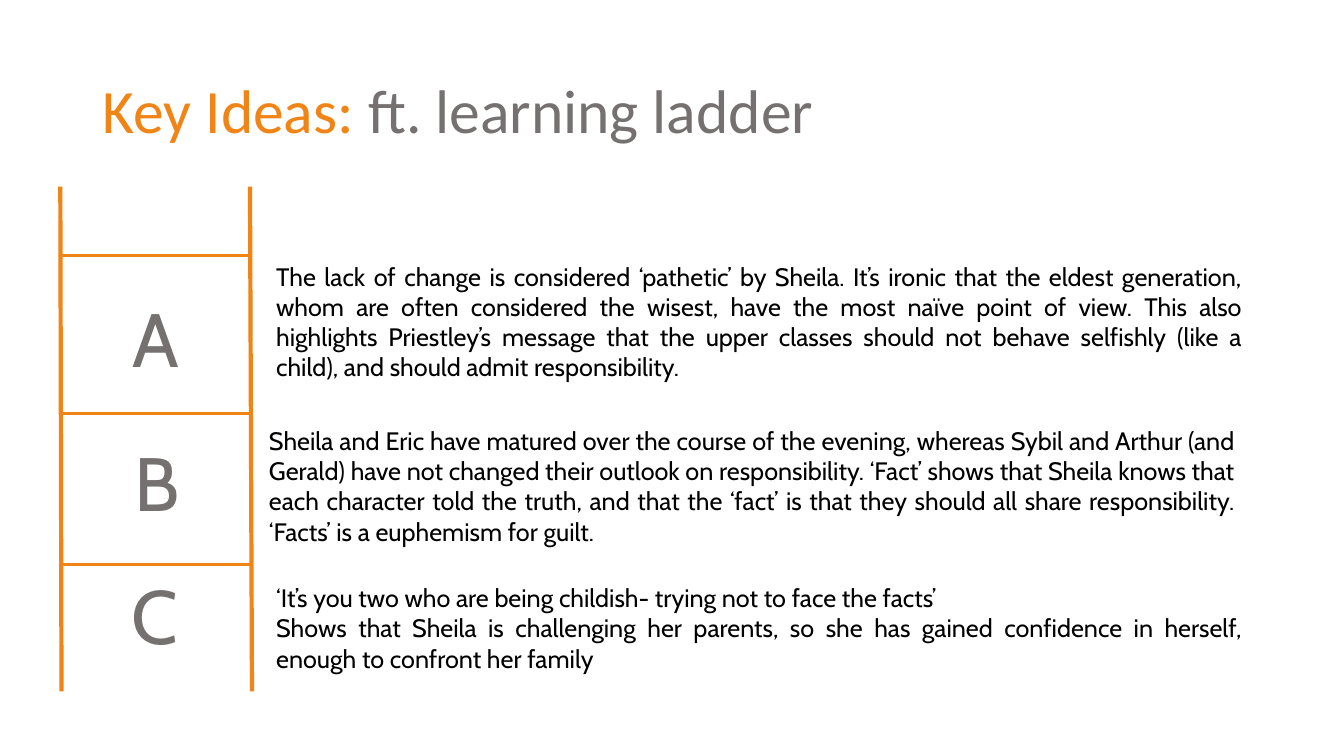
from pptx import Presentation
from pptx.dml.color import RGBColor
from pptx.enum import shapes, text
from pptx.oxml import parse_xml
from pptx.oxml.ns import nsdecls
from pptx.util import Cm, Pt

ORANGE = RGBColor(0xF1, 0x84, 0x17)
GREY = RGBColor(0x76, 0x71, 0x71)
BLACK = RGBColor(0, 0, 0)

# Ladder lines: x1, y1, x2, y2 in cm
RAILS = [(1.52, 4.7, 1.55, 17.42), (6.3, 4.7, 6.35, 17.42)]
RUNGS = [(1.5, 6.43, 6.3, 6.43), (1.55, 10.41, 6.38, 10.41),
         (1.52, 14.22, 6.32, 14.22)]

# Steps: letter, letter box, note box (left, top, width, height in cm), paragraphs
STEPS = [
    ("A", (3.1, 7.24, 1.73, 2.57), (6.71, 6.45, 24.84, 3.33), [
        "The lack of change is considered ‘pathetic’ by Sheila. It’s ironic that "
        "the eldest generation, whom are often considered the wisest, have the most "
        "naïve point of view. This also highlights Priestley’s message that the "
        "upper classes should not behave selfishly (like a child), and should admit "
        "responsibility."]),
    ("B", (3.15, 10.87, 1.55, 2.57), (6.53, 10.59, 24.84, 3.33), [
        "Sheila and Eric have matured over the course of the evening, whereas Sybil "
        "and Arthur (and Gerald) have not changed their outlook on responsibility. "
        "‘Fact’ shows that Sheila knows that each character told the truth, and "
        "that the ‘fact’ is that they should all share responsibility. ‘Facts’ is "
        "a euphemism for guilt."]),
    ("C", (3.07, 14.22, 1.73, 2.57), (6.71, 14.55, 24.84, 2.57), [
        "‘It’s you two who are being childish- trying not to face the facts’",
        "Shows that Sheila is challenging her parents, so she has gained confidence "
        "in herself, enough to confront her family"]),
]


def add_run(p, words, font, size, color):
    r = p.add_run()
    r.text = words
    r.font.name = font
    r.font.size = Pt(size)
    r.font.color.rgb = color


def set_title(s):
    sp = s.shapes.title
    sp.left, sp.top, sp.width, sp.height = Cm(2.33), Cm(1.02), Cm(29.21), Cm(3.68)
    tf = sp.text_frame
    tf.vertical_anchor = text.MSO_ANCHOR.MIDDLE
    p = tf.paragraphs[0]
    p.alignment = text.PP_ALIGN.LEFT
    p.line_spacing = 0.9
    add_run(p, "Key Ideas: ", "Calibri", 44, ORANGE)
    add_run(p, "ft. learning ladder", "Calibri", 44, GREY)


def add_line(s, ends, weight):
    line = s.shapes.add_connector(shapes.MSO_CONNECTOR.STRAIGHT,
                                  *(Cm(v) for v in ends))
    line.line.color.rgb = ORANGE
    line.line.width = Pt(weight)
    line._element.spPr.append(parse_xml(f"<a:effectLst {nsdecls('a')}/>"))


def add_text(s, box, paragraphs, size, color, align, wrap):
    tf = s.shapes.add_textbox(*(Cm(v) for v in box)).text_frame
    tf.word_wrap = wrap
    tf.auto_size = text.MSO_AUTO_SIZE.SHAPE_TO_FIT_TEXT
    for i, words in enumerate(paragraphs):
        p = tf.add_paragraph() if i else tf.paragraphs[0]
        p.alignment = align
        add_run(p, words, "Cabin", size, color)


def main():
    prs = Presentation()
    prs.slide_width, prs.slide_height = Cm(33.87), Cm(19.05)
    s = prs.slides.add_slide(prs.slide_layouts[5])
    set_title(s)

    # Ladder
    for rail in RAILS:
        add_line(s, rail, 3)
    for rung in RUNGS:
        add_line(s, rung, 2.25)

    # Letters and notes on the steps
    for letter, letter_box, note_box, notes in STEPS:
        add_text(s, letter_box, [letter], 54, GREY, text.PP_ALIGN.LEFT, False)
        add_text(s, note_box, notes, 18, BLACK, text.PP_ALIGN.JUSTIFY, True)

    prs.save("out.pptx")


if __name__ == "__main__":
    main()
